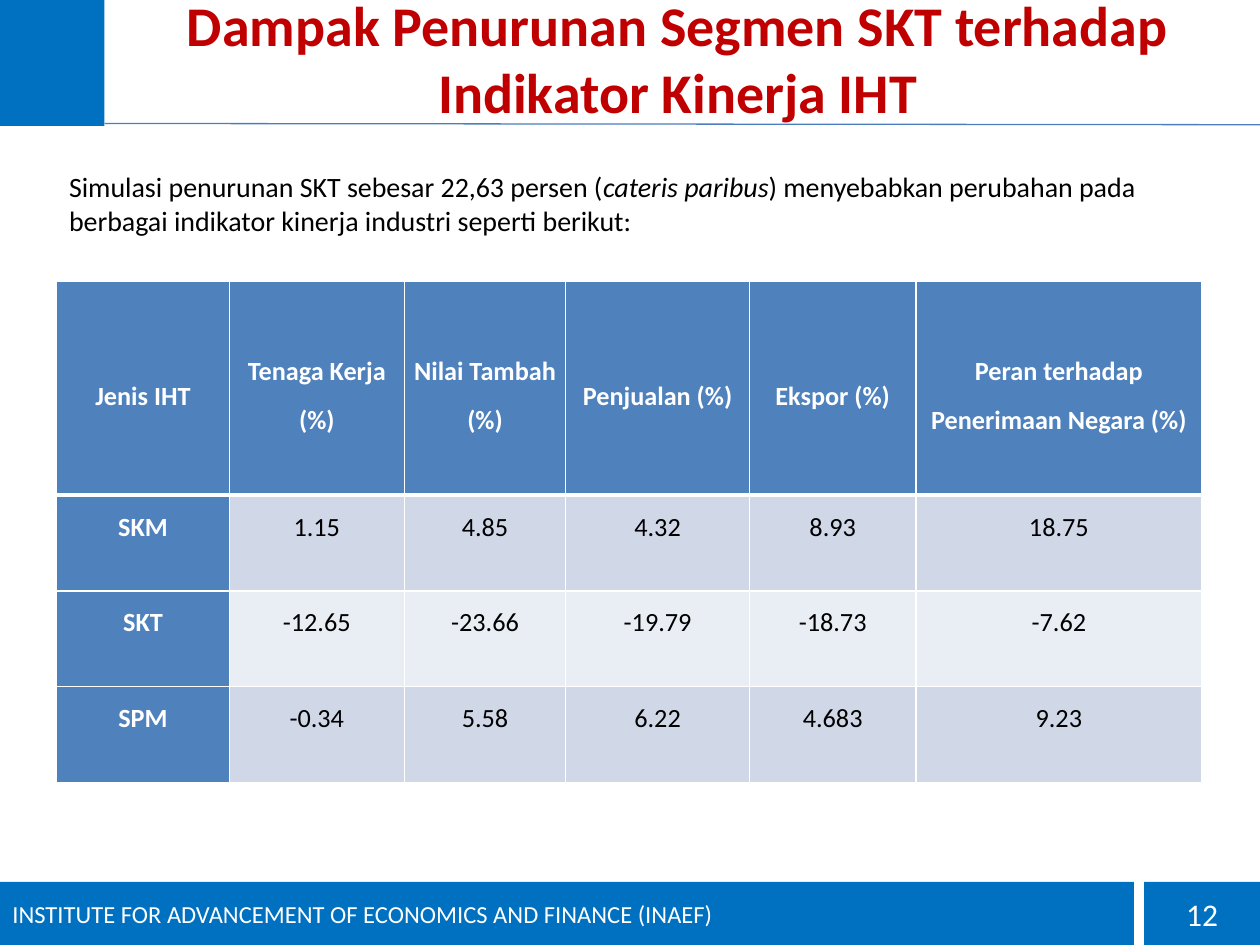
from lxml.etree import SubElement
from pptx import Presentation
from pptx.dml.color import RGBColor
from pptx.enum.shapes import MSO_CONNECTOR as Link, MSO_SHAPE as Shape
from pptx.enum.text import MSO_ANCHOR as Anchor, PP_ALIGN as Align
from pptx.oxml.ns import qn
from pptx.util import Inches, Pt

FONT = "Calibri"
BLUE, HEAD, WHITE, BLACK = "0070C0", "4F81BD", "FFFFFF", "000000"
BANDS = ["D0D8E8", "E9EDF4"]
COLS = [1.37, 1.39, 1.28, 1.46, 1.32, 2.27]
ROWS = [1.7, 0.76, 0.76, 0.76]
DATA = [
    ["Jenis IHT", "Tenaga Kerja (%)", "Nilai Tambah (%)", "Penjualan (%)",
     "Ekspor (%)", "Peran terhadap Penerimaan Negara (%)"],
    ["SKM", "1.15", "4.85", "4.32", "8.93", "18.75"],
    ["SKT", "-12.65", "-23.66", "-19.79", "-18.73", "-7.62"],
    ["SPM", "-0.34", "5.58", "6.22", "4.683", "9.23"],
]


def color(text):
    return RGBColor.from_string(text)


def paint(item, tint):
    item.fill.solid()
    item.fill.fore_color.rgb = color(tint)


def add_run(para, text, size, tint, bold=False, italic=False):
    run = para.add_run()
    run.text = text
    font = run.font
    font.name, font.size = FONT, Pt(size)
    font.bold, font.italic = bold, italic
    font.color.rgb = color(tint)


def start(frame, align, anchor):
    """Set up a text frame and return its first paragraph."""
    frame.word_wrap = True
    frame.vertical_anchor = anchor
    para = frame.paragraphs[0]
    para.alignment = align
    return para


def add_text(slide, box, align=Align.LEFT, anchor=Anchor.TOP):
    area = slide.shapes.add_textbox(*map(Inches, box))
    return start(area.text_frame, align, anchor)


def add_rect(slide, box, align=Align.LEFT):
    rect = slide.shapes.add_shape(Shape.RECTANGLE, *map(Inches, box))
    rect.shadow.inherit = False
    paint(rect, BLUE)
    rect.line.fill.background()
    return start(rect.text_frame, align, Anchor.MIDDLE)


def add_line(slide, ends, tint, width):
    line = slide.shapes.add_connector(Link.STRAIGHT, *map(Inches, ends))
    line.line.color.rgb = color(tint)
    line.line.width = Pt(width)
    SubElement(line._element.spPr, qn("a:effectLst"))


def add_edges(cell, widths):
    """Draw white cell borders; widths maps each side to points."""
    props = cell._tc.get_or_add_tcPr()
    for spot, (side, width) in enumerate(widths.items()):
        edge = props.makeelement(qn(f"a:ln{side}"), {"w": str(Pt(width))})
        fill = SubElement(edge, qn("a:solidFill"))
        SubElement(fill, qn("a:srgbClr"), val=WHITE)
        props.insert(spot, edge)


def fill_cell(cell, text, row, col):
    top, label = row == 0, row == 0 or col == 0
    paint(cell, HEAD if label else BANDS[(row - 1) % 2])
    cell.margin_left = cell.margin_right = Inches(0.06)
    cell.margin_top = cell.margin_bottom = 0
    cell.vertical_anchor = Anchor.MIDDLE if top else Anchor.TOP
    para = cell.text_frame.paragraphs[0]
    para.alignment = Align.CENTER
    para.line_spacing = 1.5
    para.space_after = Pt(6)
    add_run(para, text, 15, WHITE if label else BLACK, bold=label)
    add_edges(cell, {"L": 1, "R": 1, "T": 3 if row == 1 else 1,
                     "B": 3 if top else 1})


def add_grid(slide, left, top):
    size = map(Inches, (left, top, sum(COLS), sum(ROWS)))
    table = slide.shapes.add_table(len(ROWS), len(COLS), *size).table
    table.first_col = True
    for col, width in zip(table.columns, COLS):
        col.width = Inches(width)
    for row, height in zip(table.rows, ROWS):
        row.height = Inches(height)
    for r, texts in enumerate(DATA):
        for c, text in enumerate(texts):
            fill_cell(table.cell(r, c), text, r, c)


def main():
    deck = Presentation()
    deck.slide_width, deck.slide_height = Inches(10), Inches(7.5)
    slide = deck.slides.add_slide(deck.slide_layouts[6])

    title = add_text(slide, (0.92, 0, 8.92, 0.92), Align.CENTER, Anchor.MIDDLE)
    add_run(title, "Dampak Penurunan Segmen SKT terhadap Indikator Kinerja IHT",
            32, "C00000", bold=True)

    add_grid(slide, 0.45, 2.23)

    intro = add_text(slide, (0.45, 1.3, 9.17, 0.64))
    add_run(intro, "Simulasi penurunan SKT sebesar 22,63 persen (", 16, BLACK)
    add_run(intro, "cateris paribus", 16, BLACK, italic=True)
    add_run(intro, ") menyebabkan perubahan pada berbagai indikator kinerja "
            "industri seperti berikut:", 16, BLACK)

    add_rect(slide, (0, 0, 0.83, 1))
    add_line(slide, (0.83, 0.98, 10, 0.99), "4B7EBC", 0.75)

    footer = add_rect(slide, (0, 7, 9, 0.5))
    add_run(footer, "INSTITUTE FOR ADVANCEMENT OF ECONOMICS AND FINANCE (INAEF)",
            14, WHITE)
    number = add_rect(slide, (9.08, 7, 0.92, 0.5), Align.CENTER)
    add_run(number, "12", 18, WHITE)

    deck.save("out.pptx")


if __name__ == "__main__":
    main()
